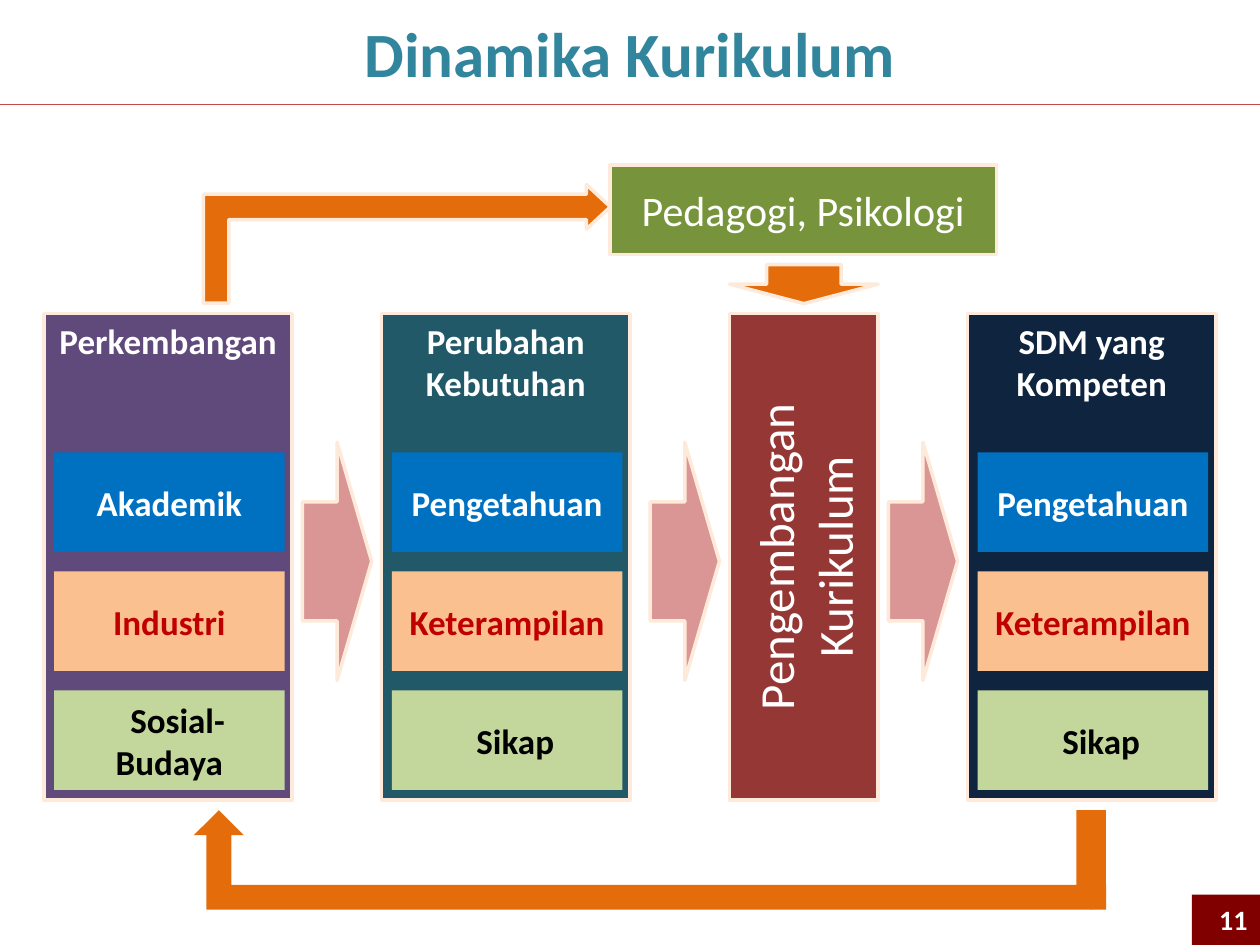
from dataclasses import dataclass

from pptx import Presentation
from pptx.dml.color import RGBColor as Rgb
from pptx.enum.shapes import MSO_CONNECTOR as Connector
from pptx.enum.shapes import MSO_SHAPE as Shape
from pptx.enum.text import MSO_ANCHOR as Anchor
from pptx.enum.text import PP_ALIGN as Align
from pptx.oxml.ns import qn
from pptx.oxml.xmlchemy import OxmlElement
from pptx.util import Inches, Pt


@dataclass(frozen=True)
class Theme:
    """Colours, font and type sizes of the slide."""
    font: str = "Calibri"
    title_size: int = 36
    process_size: int = 28
    theory_size: int = 24
    body_size: int = 20
    page_size: int = 16
    white: str = "FFFFFF"
    title: str = "31859C"
    rule: str = "BF4C48"
    outline: str = "FDEADA"
    flow: str = "E46C0A"
    step: str = "D99694"
    growth: str = "604A7B"
    needs: str = "215968"
    process: str = "953735"
    people: str = "0F243E"
    theory: str = "77933C"
    page: str = "800000"
    aspects: tuple = (("0070C0", "FFFFFF"), ("FAC090", "C00000"), ("C3D69B", "000000"))


THEME = Theme()
COLUMN_TOP, COLUMN_WIDTH, COLUMN_HEIGHT = 2.49, 1.97, 3.86
ASPECT_INSET, ASPECT_TOP, ASPECT_PITCH = 0.08, 3.59, 0.945
ASPECT_WIDTH, ASPECT_HEIGHT = 1.83, 0.79
LAST_ASPECT_INDENT = 0.13


def write(holder, text, *, size=THEME.body_size, color=THEME.white, bold=True,
          align=Align.CENTER, anchor=Anchor.MIDDLE, indent=0, vert=None):
    """Write one formatted paragraph into a shape."""
    frame = holder.text_frame
    frame.word_wrap = True
    frame.vertical_anchor = anchor
    if vert:
        frame.element.find(qn("a:bodyPr")).set("vert", vert) if hasattr(frame, "element") else \
            holder.element.txBody.find(qn("a:bodyPr")).set("vert", vert)
    paragraph = frame.paragraphs[0]
    paragraph.alignment = align
    if indent:
        paragraph.font.bold = bold
        holder.element.txBody.find(qn("a:p")).get_or_add_pPr().set("indent", str(Inches(indent)))
    run = paragraph.add_run()
    run.text = text
    run.font.name = THEME.font
    run.font.size = Pt(size)
    run.font.bold = bold
    run.font.color.rgb = Rgb.from_string(color)


def add_block(shapes, preset, box, fill, *, outlined=False, adjust=(), rotation=0, flip=False):
    """Add a filled preset shape, outlined or flipped on request."""
    block = shapes.add_shape(preset, *map(Inches, box))
    block.shadow.inherit = False
    block.fill.solid()
    block.fill.fore_color.rgb = Rgb.from_string(fill)
    if outlined:
        block.line.color.rgb = Rgb.from_string(THEME.outline)
        block.line.width = Pt(2)
    else:
        block.line.fill.background()
    for index, value in enumerate(adjust):
        block.adjustments[index] = value
    block.rotation = rotation
    if flip:
        block.element.spPr.find(qn("a:xfrm")).set("flipH", "1")
    return block


def add_column(shapes, left, fill, heading, aspects):
    """Add a headed column holding its three aspects."""
    column = add_block(shapes, Shape.RECTANGLE,
                       (left, COLUMN_TOP, COLUMN_WIDTH, COLUMN_HEIGHT), fill, outlined=True)
    write(column, heading, anchor=Anchor.TOP)
    for row, (label, (aspect_fill, ink)) in enumerate(zip(aspects, THEME.aspects)):
        box = (left + ASPECT_INSET, ASPECT_TOP + row * ASPECT_PITCH, ASPECT_WIDTH, ASPECT_HEIGHT)
        aspect = add_block(shapes, Shape.RECTANGLE, box, aspect_fill)
        write(aspect, label, color=ink, indent=LAST_ASPECT_INDENT if row == 2 else 0)


def add_title(shapes, text):
    """Add the title and the rule below it."""
    title = shapes.add_textbox(0, 0, Inches(10), Inches(0.83))
    write(title, text, size=THEME.title_size, color=THEME.title)
    rule = shapes.add_connector(Connector.STRAIGHT, 0, Inches(0.83), Inches(10), Inches(0.83))
    rule.line.color.rgb = Rgb.from_string(THEME.rule)
    rule.line.width = Pt(0.75)
    rule.element.spPr.append(OxmlElement("a:effectLst"))


def add_return_flow(shapes):
    """Add the grouped path from competent people back to development."""
    path_shapes = shapes.add_group_shape().shapes
    add_block(path_shapes, Shape.DOWN_ARROW, (8.54, 6.43, 0.24, 0.79), THEME.flow,
              adjust=(0.976, 0.474))
    add_block(path_shapes, Shape.BENT_UP_ARROW, (1.54, 6.43, 7.24, 0.79), THEME.flow, flip=True)


def main():
    """Build and save the curriculum dynamics slide."""
    deck = Presentation()
    deck.slide_width, deck.slide_height = Inches(10), Inches(7.5)
    shapes = deck.slides.add_slide(deck.slide_layouts[6]).shapes

    outcomes = ("Pengetahuan", "Keterampilan", "Sikap")
    add_column(shapes, 0.35, THEME.growth, "Perkembangan", ("Akademik", "Industri", "Sosial-Budaya"))
    add_column(shapes, 3.03, THEME.needs, "Perubahan Kebutuhan", outcomes)
    process = add_block(shapes, Shape.RECTANGLE, (5.79, COLUMN_TOP, 1.18, COLUMN_HEIGHT),
                        THEME.process, outlined=True)
    write(process, "Pengembangan Kurikulum", size=THEME.process_size, bold=False, vert="vert270")
    add_column(shapes, 7.68, THEME.people, "SDM yang Kompeten", outcomes)

    add_return_flow(shapes)
    for left in (2.4, 5.16, 7.05):
        add_block(shapes, Shape.RIGHT_ARROW, (left, 3.51, 0.55, 1.89), THEME.step, outlined=True)
    add_block(shapes, Shape.DOWN_ARROW, (5.79, 2.1, 1.18, 0.31), THEME.flow, outlined=True)
    theory = add_block(shapes, Shape.RECTANGLE, (4.84, 1.31, 3.07, 0.71), THEME.theory, outlined=True)
    write(theory, "Pedagogi, Psikologi", size=THEME.theory_size, bold=False)
    add_title(shapes, "Dinamika Kurikulum")
    add_block(shapes, Shape.BENT_UP_ARROW, (2.76, 0.32, 0.94, 3.23), THEME.flow, outlined=True,
              adjust=(0.215, 0.188, 0.202), rotation=90, flip=True)
    page = add_block(shapes, Shape.RECTANGLE, (9.46, 7.1, 0.54, 0.4), THEME.page)
    write(page, "11", size=THEME.page_size, align=Align.RIGHT)

    deck.save("out.pptx")


if __name__ == "__main__":
    main()
